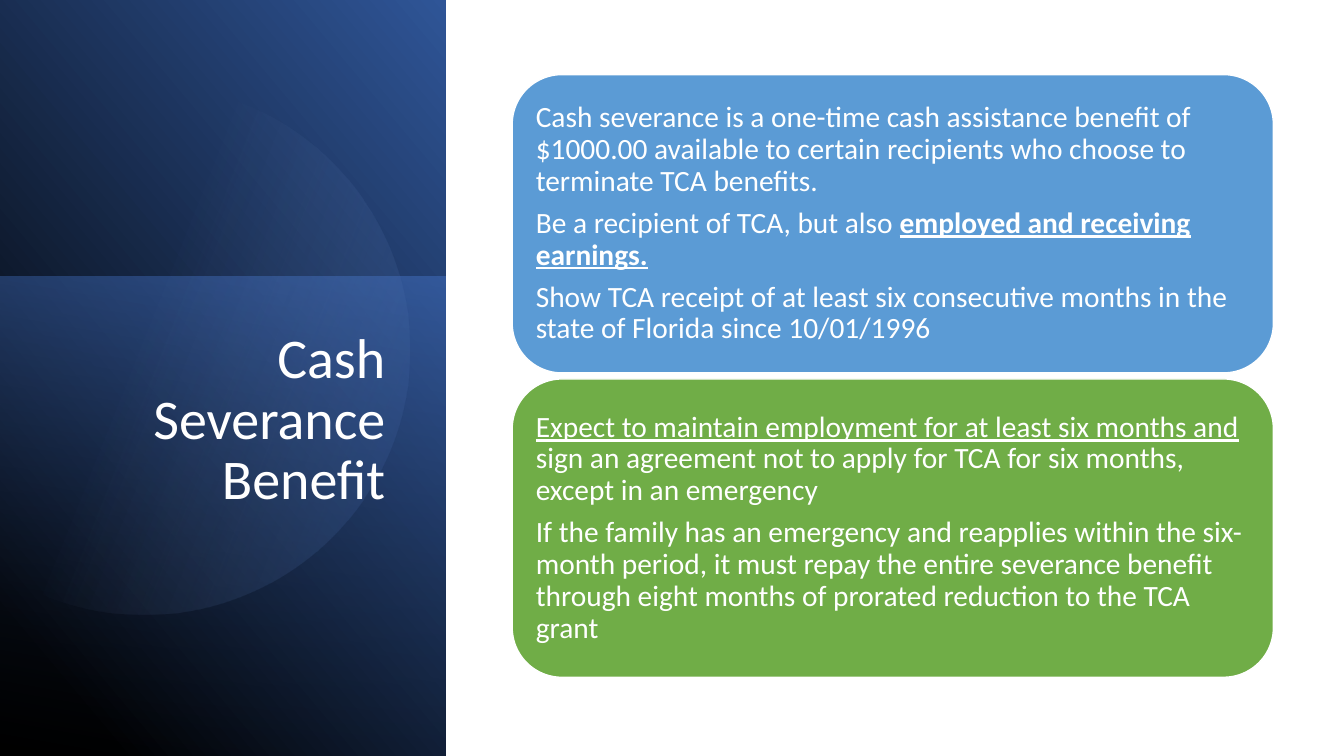
import math

from lxml import etree
from pptx import Presentation
from pptx.dml.color import RGBColor
from pptx.enum.shapes import MSO_SHAPE
from pptx.enum.text import MSO_ANCHOR, PP_ALIGN
from pptx.oxml.ns import qn
from pptx.util import Inches, Pt

RECT, ROUNDED = MSO_SHAPE.RECTANGLE, MSO_SHAPE.ROUNDED_RECTANGLE
TOP, MIDDLE = MSO_ANCHOR.TOP, MSO_ANCHOR.MIDDLE
LEFT, RIGHT = PP_ALIGN.LEFT, PP_ALIGN.RIGHT

COLORS = {
    "white": "FFFFFF", "black": "000000", "royal": "2F5597", "accent": "4472C4",
    "navy": "203864", "pale": "8FAADC", "sky": "5B9BD5", "green": "70AD47",
}

CARDS = [
    ("sky", [
        [("Cash severance is a one-time cash assistance benefit of $1000.00 available "
          "to certain recipients who choose to terminate TCA benefits.", {})],
        [("Be a recipient of TCA, but also ", {}),
         ("employed and receiving earnings.", {"bold": True, "underline": True})],
        [("Show TCA receipt of at least six consecutive months in the state of "
          "Florida since 10/01/1996", {})],
    ]),
    ("green", [
        [("Expect to maintain employment for at least six months and ", {"underline": True}),
         ("sign an agreement not to apply for TCA for six months, except in an emergency", {})],
        [("If the family has an emergency and reapplies within the six-month period, "
          "it must repay the entire severance benefit through eight months of prorated "
          "reduction to the TCA grant", {})],
    ]),
]


def rgb(name):
    return RGBColor.from_string(COLORS[name])


def add_run(p, text, size, color="white", font="Calibri", bold=False, underline=False):
    r = p.add_run()
    r.text = text
    r.font.name, r.font.size = font, Pt(size)
    r.font.bold, r.font.underline = bold, underline
    r.font.color.rgb = rgb(color)


class SlideBuilder:
    line_spacing = 0.9

    def __init__(self, slide):
        self.shapes = slide.shapes

    def fill_gradient(self, sp, stops, angle):
        """Stops are (position %, colour, opacity %); angle is clockwise."""
        sp.shadow.inherit = False
        sp.line.fill.background()
        sp.fill.gradient()
        sp.fill.gradient_angle = (360 - angle) % 360
        for stop, (position, color, _) in zip(sp.fill.gradient_stops, stops):
            stop.position = position / 100
            stop.color.rgb = rgb(color)
        colors = sp._element.spPr.iter(qn("a:srgbClr"))
        for clr, (_, _, opacity) in zip(list(colors), stops):
            if opacity < 100:
                etree.SubElement(clr, qn("a:alpha")).set("val", str(opacity * 1000))

    def panel(self, x, y, w, h, rotation, stops, angle, flip=False):
        sp = self.shapes.add_shape(RECT, Inches(x), Inches(y), Inches(w), Inches(h))
        sp.rotation = rotation
        if flip:
            sp._element.spPr.find(qn("a:xfrm")).set("flipH", "1")
        self.fill_gradient(sp, stops, angle)

    def cut_circle(self, cx, cy, radius, stops, angle, steps=120):
        """Circle cut off by the left edge of the slide."""
        half = math.acos(-cx / radius)
        turns = [half * (2 * i / steps - 1) for i in range(steps + 1)]
        points = [(Inches(cx + radius * math.cos(t)), Inches(cy + radius * math.sin(t)))
                  for t in turns]
        outline = self.shapes.build_freeform(*points[0])
        outline.add_line_segments(points[1:], close=True)
        self.fill_gradient(outline.convert_to_shape(), stops, angle)

    def add_text(self, tf, paragraphs, size, align=LEFT, anchor=TOP, space_after=0):
        tf.word_wrap = True
        tf.vertical_anchor = anchor
        for i, runs in enumerate(paragraphs):
            p = tf.add_paragraph() if i else tf.paragraphs[0]
            p.alignment = align
            p.line_spacing = self.line_spacing
            p.space_after = Pt(space_after)
            for text, style in runs:
                add_run(p, text, size, **style)

    def title(self, text, x, y, w, h):
        box = self.shapes.add_textbox(Inches(x), Inches(y), Inches(w), Inches(h))
        self.add_text(box.text_frame, [[(text, {})]], 40, align=RIGHT)

    def card(self, x, y, w, h, color, paragraphs):
        sp = self.shapes.add_shape(ROUNDED, Inches(x), Inches(y), Inches(w), Inches(h))
        sp.shadow.inherit = False
        sp.fill.solid()
        sp.fill.fore_color.rgb = rgb(color)
        sp.line.color.rgb = rgb("white")
        sp.line.width = Pt(1)
        tf = sp.text_frame
        tf.margin_left = tf.margin_right = tf.margin_top = tf.margin_bottom = Inches(0.09)
        self.add_text(tf, paragraphs, 21, anchor=MIDDLE, space_after=7.35)


def main():
    prs = Presentation()
    prs.slide_width, prs.slide_height = Inches(13.33), Inches(7.5)
    s = SlideBuilder(prs.slides.add_slide(prs.slide_layouts[6]))

    # Blue side panel
    s.panel(-1.55, 1.55, 7.52, 4.42, 90,
            [(11, "black", 100), (100, "royal", 100)], 310, flip=True)
    s.panel(-0.17, 2.91, 4.76, 4.42, 270,
            [(0, "accent", 50), (100, "navy", 0)], 190)
    s.cut_circle(1.43, 3.47, 2.63, [(39, "pale", 0), (100, "royal", 26)], 21.6)

    # Title
    s.title("Cash Severance Benefit", 0.58, 3.23, 3.34, 3.86)

    # Text cards
    for i, (color, paragraphs) in enumerate(CARDS):
        s.card(5.08, 0.74 + i * 3.02, 7.55, 2.96, color, paragraphs)

    prs.save("out.pptx")


if __name__ == "__main__":
    main()
